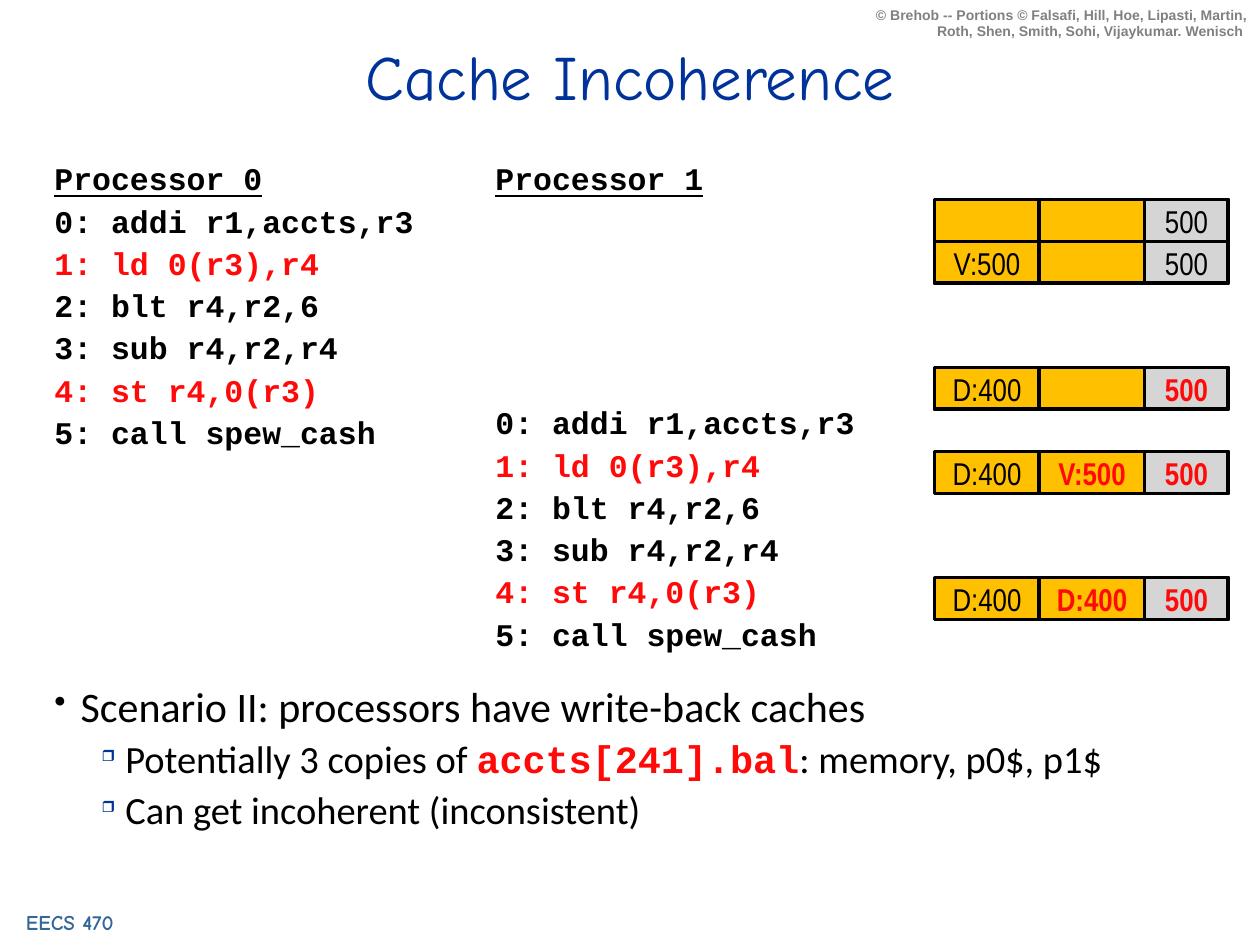
from lxml.etree import SubElement
from pptx import Presentation
from pptx.dml.color import RGBColor
from pptx.enum.shapes import MSO_SHAPE
from pptx.enum.text import MSO_ANCHOR, PP_ALIGN
from pptx.oxml.ns import qn
from pptx.util import Pt

BLACK = RGBColor(0x00, 0x00, 0x00)
RED = RGBColor(0xFF, 0x09, 0x09)
NAVY = RGBColor(0x00, 0x33, 0x99)
STEEL = RGBColor(0x33, 0x66, 0x99)
GREY = RGBColor(0x80, 0x80, 0x80)
CACHE_FILL = RGBColor(0xFF, 0xC0, 0x00)
MEMORY_FILL = RGBColor(0xD5, 0xD5, 0xD5)

PROGRAM = ["addi r1,accts,r3", "ld 0(r3),r4", "blt r4,r2,6",
           "sub r4,r2,r4", "st r4,0(r3)", "call spew_cash"]
CODE_GAP = 4.7
CODE_PITCH = 23.05

CELL_HEIGHT = 24
COLUMNS = [(60, CACHE_FILL), (60, CACHE_FILL), (48, MEMORY_FILL)]
# Row slot, then (text, is highlighted) for cache 0, cache 1 and memory
STATES = [
    (0, [("", False), ("", False), ("500", False)]),
    (1, [("V:500", False), ("", False), ("500", False)]),
    (4, [("D:400", False), ("", False), ("500", True)]),
    (6, [("D:400", False), ("V:500", True), ("500", True)]),
    (9, [("D:400", False), ("D:400", True), ("500", True)]),
]


def style(font, name, size, color, bold=False):
    font.name = name
    font.size = Pt(size)
    font.color.rgb = color
    font.bold = bold


def add_text_frame(page, left, top, width, height):
    box = page.shapes.add_textbox(Pt(left), Pt(top), Pt(width), Pt(height))
    box.text_frame.word_wrap = True
    return box.text_frame


def next_para(frame):
    """Return the untouched first paragraph, or a new one after it."""
    first = frame.paragraphs[0]
    return frame.add_paragraph() if first.runs else first


def add_line(page, left, top, width, height, text, align, *font):
    para = add_text_frame(page, left, top, width, height).paragraphs[0]
    para.text = text
    para.alignment = align
    style(para.font, *font)


def add_listing(page, left, top, width, height, title, skipped_lines=0):
    """Place a processor's program, starting some lines below its title."""
    frame = add_text_frame(page, left, top, width, height)
    lines = [title] + [f"{i}: {code}" for i, code in enumerate(PROGRAM)]
    for row, line in enumerate(lines):
        para = next_para(frame)
        para.text = line
        para.line_spacing = 0.9
        skip = skipped_lines * CODE_PITCH if row == 1 else 0
        para.space_before = Pt(CODE_GAP + skip)
        touches_memory = ": ld" in line or ": st" in line
        style(para.font, "Courier New", 18, RED if touches_memory else BLACK, True)
        para.font.underline = row == 0


def add_cell(page, left, top, width, fill, text, highlighted):
    cell = page.shapes.add_shape(MSO_SHAPE.RECTANGLE, Pt(left), Pt(top),
                                 Pt(width), Pt(CELL_HEIGHT))
    cell.shadow.inherit = False
    cell.fill.solid()
    cell.fill.fore_color.rgb = fill
    cell.line.color.rgb = BLACK
    cell.line.width = Pt(2.25)
    if text:
        frame = cell.text_frame
        frame.word_wrap = False
        frame.vertical_anchor = MSO_ANCHOR.MIDDLE
        para = frame.paragraphs[0]
        para.text = text
        para.alignment = PP_ALIGN.CENTER
        style(para.font, "Arial Narrow", 18, RED if highlighted else BLACK, highlighted)


def add_cache_states(page, left, top):
    for slot, values in STATES:
        x = left
        for (width, fill), (text, highlighted) in zip(COLUMNS, values):
            add_cell(page, x, top + slot * CELL_HEIGHT, width, fill, text, highlighted)
            x += width


def set_bullet(para, char, percent, color, margin, hang):
    props = para._p.get_or_add_pPr()
    props.set("marL", str(Pt(margin)))
    props.set("indent", str(-Pt(hang)))
    bullet_color = SubElement(props, qn("a:buClr"))
    SubElement(bullet_color, qn("a:srgbClr"), val=str(color))
    SubElement(props, qn("a:buSzPct"), val=str(percent * 1000))
    SubElement(props, qn("a:buChar"), char=char)


def add_bullet(frame, level, parts):
    """Add one bullet; every second part is highlighted code."""
    para = next_para(frame)
    size = (24, 22)[level]
    para.level = level
    para.line_spacing = Pt(size)
    para.space_before = Pt((15, 7)[level])
    if level == 0:
        set_bullet(para, "•", 80, BLACK, 15, 15)
    else:
        set_bullet(para, "❒", 40, NAVY, 40.5, 13.5)
    style(para.font, "Calibri", size, BLACK)
    for i, part in enumerate(parts):
        span = para.add_run()
        span.text = part
        if i % 2:
            style(span.font, "Courier New", size, RED, True)


def add_scenario(page, left, top, width, height):
    frame = add_text_frame(page, left, top, width, height)
    add_bullet(frame, 0, ["Scenario II: processors have write-back caches"])
    add_bullet(frame, 1, ["Potentially 3 copies of ", "accts[241].bal",
                          ": memory, p0$, p1$"])
    add_bullet(frame, 1, ["Can get incoherent (inconsistent)"])


def main():
    deck = Presentation()
    deck.slide_width, deck.slide_height = Pt(720), Pt(540)
    page = deck.slides.add_slide(deck.slide_layouts[6])
    add_line(page, -6, 516, 96, 21.6, "EECS 470 ", PP_ALIGN.CENTER,
             "Comic Neue", 12, STEEL, True)
    add_line(page, 492, 0, 228, 26.6,
             "© Brehob -- Portions © Falsafi, Hill, Hoe, Lipasti, Martin, "
             "Roth, Shen, Smith, Sohi, Vijaykumar. Wenisch ",
             PP_ALIGN.RIGHT, "Arial", 8, GREY, True)
    add_line(page, 27, 18, 666, 48, "Cache Incoherence", PP_ALIGN.CENTER,
             "Comic Neue", 36, NAVY)
    add_scenario(page, 24, 390, 672, 102)
    add_listing(page, 24, 90, 258, 168, "Processor 0")
    add_listing(page, 276, 90, 258, 288, "Processor 1", skipped_lines=5)
    add_cache_states(page, 534, 114)
    deck.save("out.pptx")


if __name__ == "__main__":
    main()
